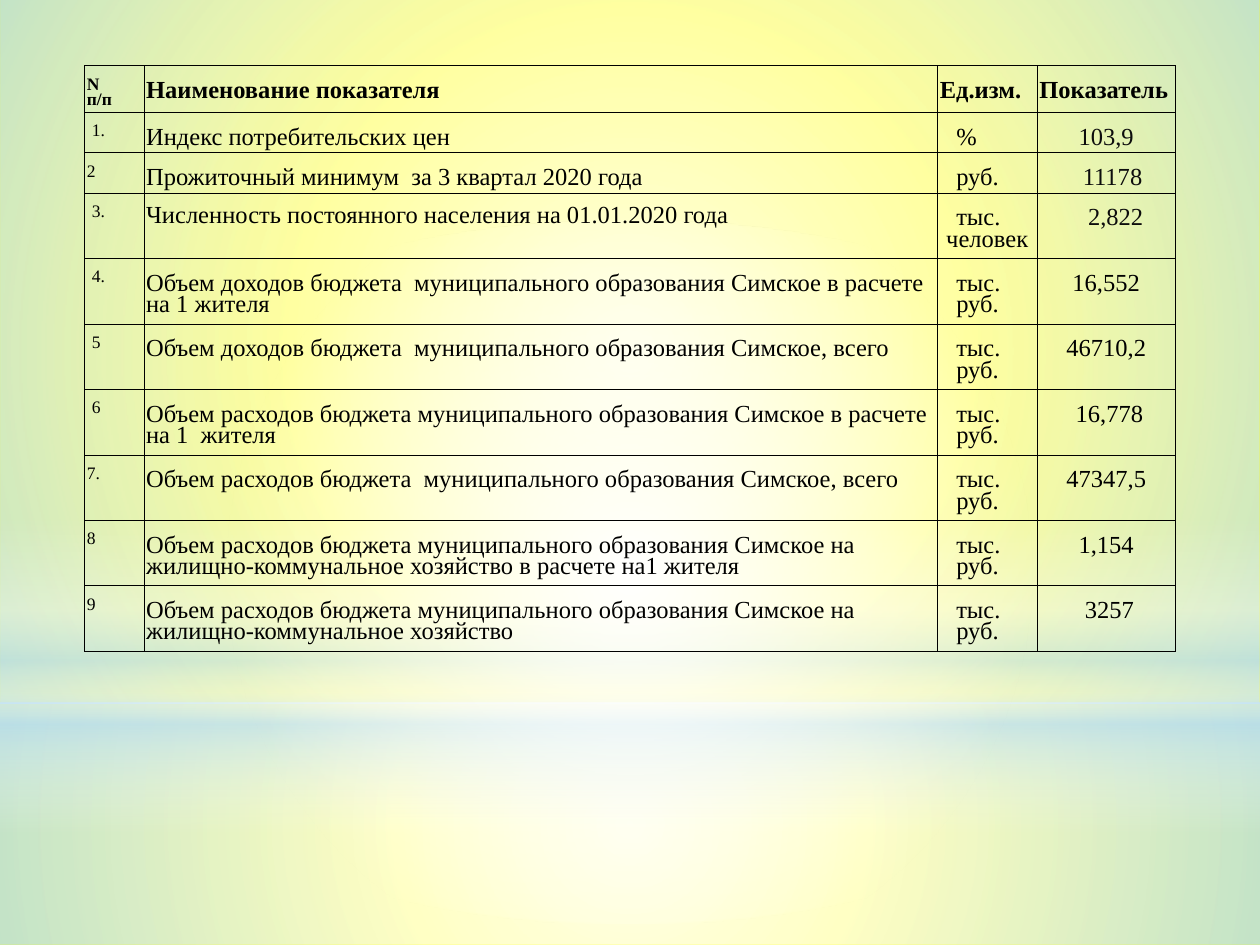
from lxml import etree
from pptx import Presentation
from pptx.dml.color import RGBColor
from pptx.enum import shapes, text
from pptx.oxml import ns
from pptx.util import Inches, Pt

YELLOW = RGBColor(0xFF, 0xFF, 0x00)
WHITE = RGBColor(0xFF, 0xFF, 0xFF)
SKY = RGBColor(0xB4, 0xDC, 0xFA)
BLACK = RGBColor(0x00, 0x00, 0x00)
NEAR_BLACK = RGBColor(0x0D, 0x0D, 0x0D)
FONT = "Times New Roman"


def fill_gradient(shape, stops, angle=None):
    """Fill with (position %, colour, opacity %) stops, radial unless an angle is given."""
    properties = shape._element.spPr
    gradient = etree.Element(ns.qn("a:gradFill"), rotWithShape="1")
    stop_list = etree.SubElement(gradient, ns.qn("a:gsLst"))
    for position, color, opacity in stops:
        stop = etree.SubElement(stop_list, ns.qn("a:gs"), pos=str(position * 1000))
        rgb = etree.SubElement(stop, ns.qn("a:srgbClr"), val=str(color))
        etree.SubElement(rgb, ns.qn("a:alpha"), val=str(opacity * 1000))
    if angle is None:
        path = etree.SubElement(gradient, ns.qn("a:path"), path="circle")
        etree.SubElement(path, ns.qn("a:fillToRect"), l="50000", t="50000", r="50000", b="50000")
    else:
        etree.SubElement(gradient, ns.qn("a:lin"), ang=str(angle * 60000), scaled="0")
    properties.find(ns.qn("a:prstGeom")).addnext(gradient)


def draw_borders(cell):
    properties = cell._tc.get_or_add_tcPr()
    for index, side in enumerate(("a:lnL", "a:lnR", "a:lnT", "a:lnB")):
        line = etree.Element(ns.qn(side), w="762")
        solid = etree.SubElement(line, ns.qn("a:solidFill"))
        etree.SubElement(solid, ns.qn("a:srgbClr"), val=str(BLACK))
        properties.insert(index, line)


presentation = Presentation()
presentation.slide_width = Inches(10)
presentation.slide_height = Inches(7.5)
slide = presentation.slides.add_slide(presentation.slide_layouts[6])
slide.background.fill.solid()
slide.background.fill.fore_color.rgb = YELLOW

# Background glow: floor, sky, horizon band, central light
RECTANGLE = shapes.MSO_SHAPE.RECTANGLE
OVAL = shapes.MSO_SHAPE.OVAL
glows = [
    (RECTANGLE, 5.58, 1.92, [(0, WHITE, 91), (37, WHITE, 76), (100, SKY, 79)], None),
    (RECTANGLE, 0, 5.58, [(0, WHITE, 89), (48, WHITE, 62), (100, SKY, 79)], None),
    (RECTANGLE, 4.12, 2.5, [(0, WHITE, 0), (29, WHITE, 30), (45, SKY, 40),
                            (55, WHITE, 26), (65, SKY, 60), (100, WHITE, 0)], 90),
    (OVAL, 1.75, 5.58, [(0, WHITE, 100), (56, WHITE, 0)], None),
]
for kind, top, height, stops, angle in glows:
    glow = slide.shapes.add_shape(kind, 0, Inches(top), Inches(10), Inches(height))
    glow.shadow.inherit = False
    glow.line.fill.background()
    fill_gradient(glow, stops, angle)

# Indicator table
THOUSAND_RUB = "тыс.\nруб."
rows = [
    ("N\nп/п", "Наименование показателя", "Ед.изм.", "Показатель"),
    ("1.", "Индекс потребительских цен", "%", "103,9"),
    ("2", "Прожиточный минимум  за 3 квартал 2020 года", "руб.", "11178"),
    ("3.", "Численность постоянного населения на 01.01.2020 года", "тыс.\nчеловек", "2,822"),
    ("4.", "Объем доходов бюджета  муниципального образования Симское в расчете на 1 жителя",
     THOUSAND_RUB, "16,552"),
    ("5", "Объем доходов бюджета  муниципального образования Симское, всего",
     THOUSAND_RUB, "46710,2"),
    ("6", "Объем расходов бюджета муниципального образования Симское в расчете на 1  жителя",
     THOUSAND_RUB, "16,778"),
    ("7.", "Объем расходов бюджета  муниципального образования Симское, всего",
     THOUSAND_RUB, "47347,5"),
    ("8", "Объем расходов бюджета муниципального образования Симское на "
     "жилищно-коммунальное хозяйство в расчете на1 жителя", THOUSAND_RUB, "1,154"),
    ("9", "Объем расходов бюджета муниципального образования Симское на "
     "жилищно-коммунальное хозяйство", THOUSAND_RUB, "3257"),
]
column_widths = [0.47, 6.3, 0.79, 1.1]
row_heights = [0.37, 0.32, 0.32] + [0.52] * 7
NUMBER, NAME, UNIT, VALUE = range(4)
POPULATION_ROW = 3
number_indents = {row: 0.04 for row in (1, 3, 4, 5, 6)}
value_indents = {2: 0.1, 3: 0.15, 6: 0.05, 9: 0.05}

table = slide.shapes.add_table(len(rows), len(column_widths), Inches(0.67), Inches(0.52),
                               Inches(sum(column_widths)), Inches(sum(row_heights))).table
table.first_row = False
table.horz_banding = False
for column, width in zip(table.columns, column_widths):
    column.width = Inches(width)
for row, height in zip(table.rows, row_heights):
    row.height = Inches(height)

for row_index, row in enumerate(rows):
    for column_index, content in enumerate(row):
        is_header = row_index == 0
        is_population_name = (row_index, column_index) == (POPULATION_ROW, NAME)
        cell = table.cell(row_index, column_index)
        cell.fill.background()
        draw_borders(cell)
        cell.margin_left = cell.margin_right = Inches(0.02)
        cell.margin_bottom = 0
        cell.margin_top = Inches(0.1 if column_index == NUMBER else
                                 0.09 if is_population_name else 0.13)
        cell.text_frame.text = content
        for paragraph in cell.text_frame.paragraphs:
            indent = 0
            if column_index == NUMBER:
                indent = number_indents.get(row_index, 0)
            elif column_index == UNIT and not is_header:
                indent = 0.05 if paragraph.text == "человек" else 0.13
            elif column_index == VALUE:
                indent = value_indents.get(row_index, 0)
            paragraph._p.get_or_add_pPr().set("marL", str(Inches(indent)))
            paragraph.line_spacing = 0.9 if is_population_name else 0.78
            centered = column_index == VALUE and not is_header
            paragraph.alignment = text.PP_ALIGN.CENTER if centered else text.PP_ALIGN.LEFT
            for run in paragraph.runs:
                run.font.name = FONT
                run.font.size = Pt(10 if column_index == NUMBER else 14)
                run.font.bold = is_header
                early_value = column_index == VALUE and 1 <= row_index <= POPULATION_ROW
                run.font.color.rgb = NEAR_BLACK if early_value else BLACK

presentation.save("out.pptx")
